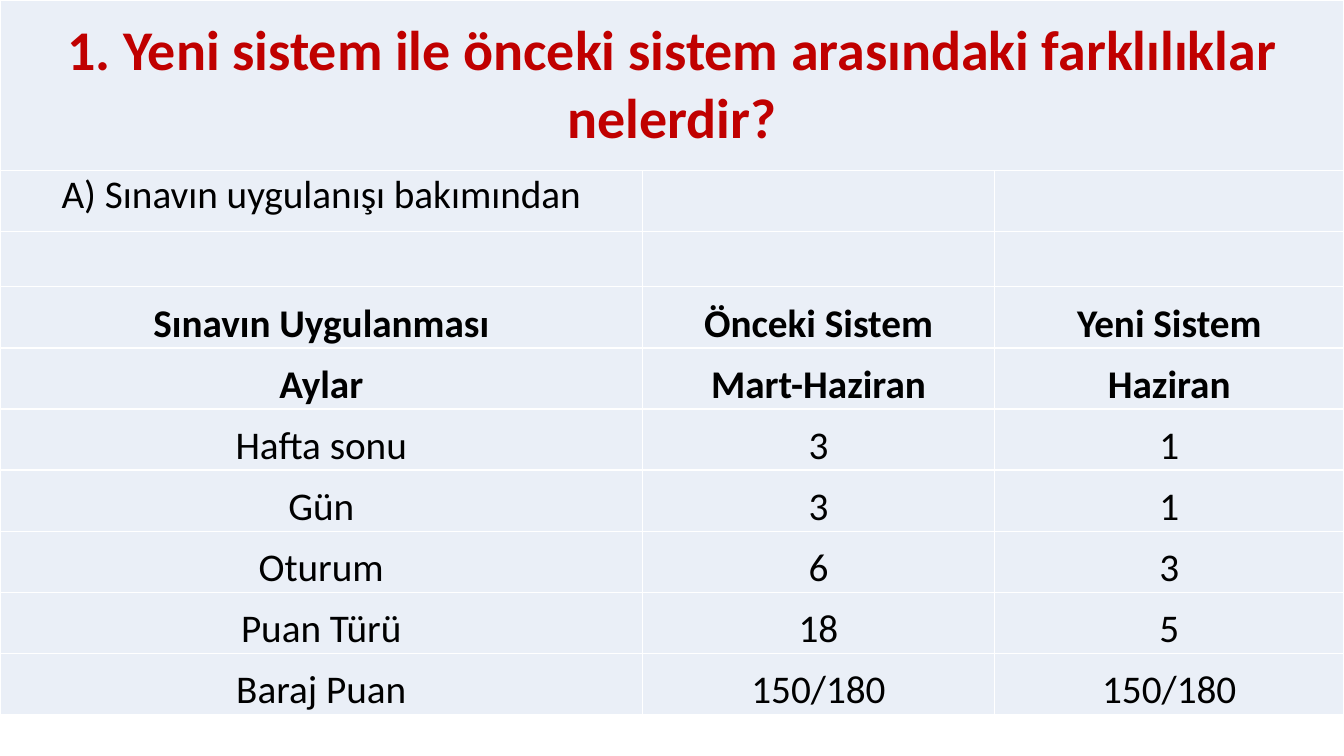
from lxml.etree import SubElement
from pptx import Presentation
from pptx.dml.color import RGBColor
from pptx.enum.text import MSO_ANCHOR, PP_ALIGN
from pptx.oxml.ns import qn
from pptx.util import Inches, Pt

RED = RGBColor(0xC0, 0x00, 0x00)
BLACK = RGBColor(0x00, 0x00, 0x00)
WHITE = RGBColor(0xFF, 0xFF, 0xFF)
PALE = RGBColor(0xEA, 0xEF, 0xF7)
FONT = "Calibri"
WIDTH, HEIGHT = 13.33, 7.5

TITLE = "1. Yeni sistem ile önceki sistem arasındaki farklılıklar nelerdir?"
ROWS = [
    (TITLE, "", ""),
    ("A) Sınavın uygulanışı bakımından", "", ""),
    ("", "", ""),
    ("Sınavın Uygulanması", "Önceki Sistem", "Yeni Sistem"),
    ("Aylar", "Mart-Haziran", "Haziran"),
    ("Hafta sonu", "3", "1"),
    ("Gün", "3", "1"),
    ("Oturum", "6", "3"),
    ("Puan Türü", "18", "5"),
    ("Baraj Puan", "150/180", "150/180"),
]
BOLD = (0, 3, 4)
ANCHORS = {0: MSO_ANCHOR.MIDDLE, 1: MSO_ANCHOR.TOP, 2: MSO_ANCHOR.TOP}
TITLE_ROW, GAP_ROW = 1.69, 0.55
COLUMNS = (0.478, 0.262, 0.26)


def add_edges(cell):
    """Draw thin white borders round a cell."""
    props = cell._tc.get_or_add_tcPr()
    for side in ("a:lnL", "a:lnR", "a:lnT", "a:lnB"):
        line = SubElement(props, qn(side), w=str(Pt(1)))
        fill = SubElement(line, qn("a:solidFill"))
        SubElement(fill, qn("a:srgbClr"), val=str(WHITE))


def fill_cell(cell, text, row):
    """Write and format one cell according to its row."""
    add_edges(cell)
    cell.fill.solid()
    cell.fill.fore_color.rgb = PALE
    if not text:
        return
    cell.margin_left = cell.margin_right = cell.margin_top = Inches(0.01)
    cell.margin_bottom = 0
    cell.vertical_anchor = ANCHORS.get(row, MSO_ANCHOR.BOTTOM)
    cell.text_frame.text = text
    para = cell.text_frame.paragraphs[0]
    para.alignment = PP_ALIGN.CENTER
    font = para.runs[0].font
    font.name = FONT
    font.size = Pt(28 if row else 40)
    font.bold = row in BOLD
    font.color.rgb = BLACK if row else RED


def add_grid(slide, left, top, width, height):
    """Place the comparison table in the given box, in inches."""
    frame = slide.shapes.add_table(
        len(ROWS), len(COLUMNS),
        Inches(left), Inches(top), Inches(width), Inches(height))
    table = frame.table
    table.first_row = table.horz_banding = False
    for column, share in zip(table.columns, COLUMNS):
        column.width = Inches(width * share)
    plain = (height - TITLE_ROW - GAP_ROW) / (len(ROWS) - 2)
    special = {0: TITLE_ROW, 2: GAP_ROW}
    for row, texts in enumerate(ROWS):
        table.rows[row].height = Inches(special.get(row, plain))
        for col, text in enumerate(texts):
            fill_cell(table.cell(row, col), text, row)
    table.cell(0, 0).merge(table.cell(0, len(COLUMNS) - 1))


def main():
    """Build the slide and save it."""
    deck = Presentation()
    deck.slide_width, deck.slide_height = Inches(WIDTH), Inches(HEIGHT)
    slide = deck.slides.add_slide(deck.slide_layouts[6])
    add_grid(slide, 0, 0, WIDTH, 7.09)
    deck.save("out.pptx")


if __name__ == "__main__":
    main()
